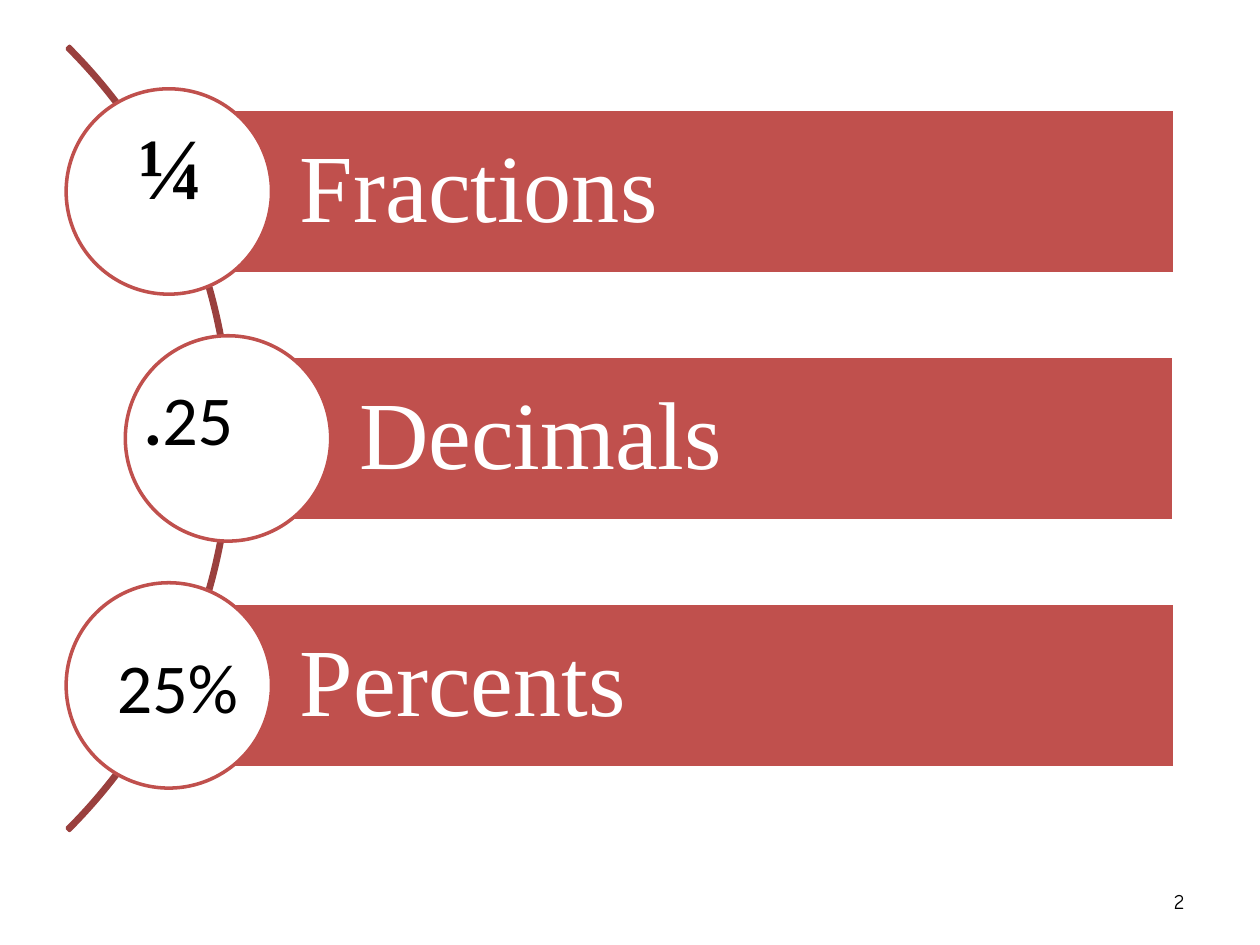
import pptx
import pptx.dml.color
import pptx.enum.shapes
import pptx.enum.text
import pptx.util

RED = pptx.dml.color.RGBColor(0xC0, 0x50, 0x4D)
DARK_RED = pptx.dml.color.RGBColor(0x9A, 0x40, 0x3E)
WHITE = pptx.dml.color.RGBColor(0xFF, 0xFF, 0xFF)
BLACK = pptx.dml.color.RGBColor(0x00, 0x00, 0x00)
SHAPE = pptx.enum.shapes.MSO_SHAPE
ALIGN = pptx.enum.text.PP_ALIGN
ANCHOR = pptx.enum.text.MSO_ANCHOR
Inches, Pt = pptx.util.Inches, pptx.util.Pt

prs = pptx.Presentation()
prs.slide_width, prs.slide_height = Inches(10), Inches(7.5)
s = prs.slides.add_slide(prs.slide_layouts[6])


def add_shape(kind, left, top, width, height, fill, line):
    sp = s.shapes.add_shape(kind, *map(Inches, (left, top, width, height)))
    sp.shadow.inherit = False
    if fill is None:
        sp.fill.background()
    else:
        sp.fill.solid()
        sp.fill.fore_color.rgb = fill
    sp.line.color.rgb = line
    sp.line.width = Pt(2)
    return sp


def write(sp, runs, size, font, color=BLACK, align=ALIGN.LEFT,
          anchor=ANCHOR.TOP, insets=(0.1, 0.05, 0.1, 0.05), spacing=1.0):
    """Fill a shape with one paragraph of (text, bold) runs; insets run left, top, right, bottom."""
    tf = sp.text_frame
    tf.word_wrap = True
    tf.vertical_anchor = anchor
    tf.margin_left, tf.margin_top, tf.margin_right, tf.margin_bottom = map(Inches, insets)
    p = tf.paragraphs[0]
    p.alignment = align
    p.line_spacing = spacing
    for text, bold in runs:
        r = p.add_run()
        r.text = text
        r.font.size, r.font.name, r.font.bold = Pt(size), font, bold
        r.font.color.rgb = color


# Rows share one pitch; the middle one is pushed right by the arc
MIDDLE, PITCH = 3.48, 1.96
BAR_RIGHT, BAR_HEIGHT, CIRCLE, ARC = 9.32, 1.31, 1.63, 8.8

arc = add_shape(SHAPE.BLOCK_ARC, -6.96, MIDDLE - ARC / 2, ARC, ARC, None, DARK_RED)
for i, value in enumerate((189, 27, 0.003)):
    arc.adjustments[i] = value

rows = [("Fractions", 1.34), ("Decimals", 1.81), ("Percents", 1.34)]
for i, (label, x) in enumerate(rows):
    y = MIDDLE + (i - 1) * PITCH
    bar = add_shape(SHAPE.RECTANGLE, x, y - BAR_HEIGHT / 2, BAR_RIGHT - x, BAR_HEIGHT, RED, WHITE)
    write(bar, [(label, False)], 55, "Times New Roman", WHITE, anchor=ANCHOR.MIDDLE,
          insets=(1.04, 0.15, 0.15, 0.15), spacing=0.9)
    add_shape(SHAPE.OVAL, x - CIRCLE / 2, y - CIRCLE / 2, CIRCLE, CIRCLE, WHITE, RED)

examples = [
    ((0.83, 0.84, 1.26, 0.94), [("¼", True)], 50, "Times New Roman", (0.27, 0.05, 0.1, 0.05)),
    ((0.91, 2.25, 1.42, 1.45), [(".", True), ("25", False)], 40, "Calibri", (0.23, 0.73, 0.1, 0.05)),
    ((0.83, 4.38, 1.57, 1.45), [("25%", False)], 40, "Calibri", (0.1, 0.73, 0.1, 0.05)),
]
for box, runs, size, font, insets in examples:
    write(s.shapes.add_textbox(*map(Inches, box)), runs, size, font, insets=insets)

page_number = s.shapes.add_textbox(*map(Inches, (7.17, 6.95, 2.33, 0.4)))
write(page_number, [("2", False)], 12, "Comic Neue", align=ALIGN.RIGHT, anchor=ANCHOR.MIDDLE)

prs.save("out.pptx")
